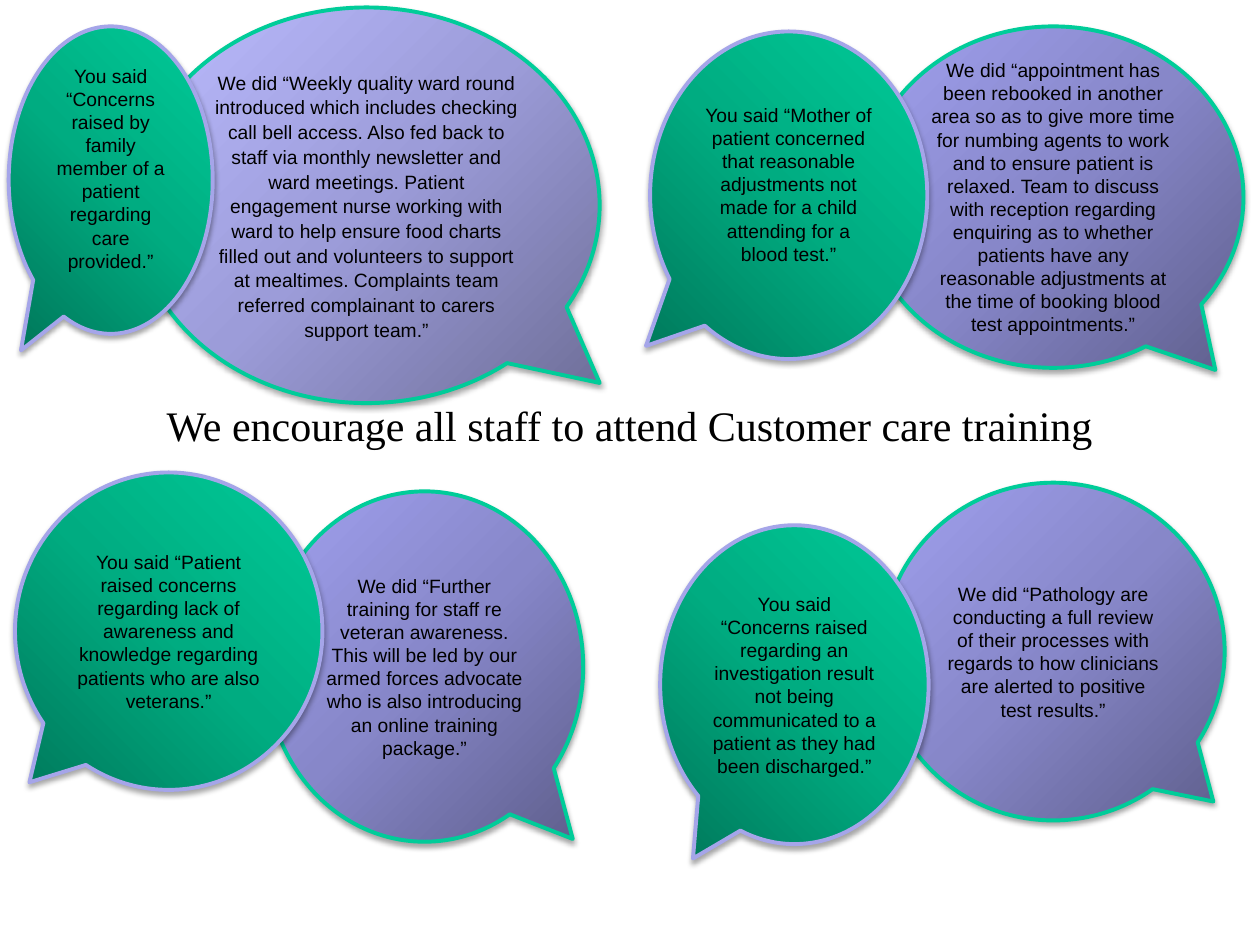
from dataclasses import dataclass

from lxml.etree import SubElement
from pptx import Presentation
from pptx.dml.color import RGBColor
from pptx.enum.shapes import MSO_SHAPE
from pptx.enum.text import MSO_ANCHOR, MSO_AUTO_SIZE, PP_ALIGN
from pptx.oxml import parse_xml
from pptx.oxml.ns import nsdecls, qn
from pptx.util import Pt


@dataclass(frozen=True)
class Theme:
    ink: str = "000000"
    said: tuple = ("00795B", "00AC81", "00CC99")
    did: tuple = ("5F5F8D", "8787C9", "A0A0EE")
    pale: tuple = ("6E6E98", "9C9CD9", "BBBBFF")
    said_edge: str = "A5A5E9"
    did_edge: str = "00CC99"
    edge: float = 2.25
    sans: str = "Arial"
    serif: str = "Times New Roman"
    small: int = 11
    large: int = 24


class Board:
    def __init__(self, slide, theme):
        self.slide = slide
        self.theme = theme

    def label(self, frame, text, font, size):
        frame.word_wrap = True
        para = frame.paragraphs[0]
        para.alignment = PP_ALIGN.CENTER
        run = para.add_run()
        run.text = text
        run.font.name = font
        run.font.size = Pt(size)
        run.font.color.rgb = RGBColor.from_string(self.theme.ink)
        return para

    def title(self, text, box):
        frame = self.slide.shapes.add_textbox(*map(Pt, box)).text_frame
        self.label(frame, text, self.theme.serif, self.theme.large)
        frame.auto_size = MSO_AUTO_SIZE.SHAPE_TO_FIT_TEXT

    def glow(self, shape, tones, left):
        """Fill with a round gradient, darkest at a lower corner."""
        stops = "".join(
            f'<a:gs pos="{pos}"><a:srgbClr val="{tone}"/></a:gs>'
            for pos, tone in zip((0, 50000, 100000), tones))
        l, r = (0, 100000) if left else (100000, 0)
        shape.fill.background()
        props = shape._element.spPr
        props.replace(props.find(qn("a:noFill")), parse_xml(
            f'<a:gradFill {nsdecls("a")} rotWithShape="1"><a:gsLst>{stops}</a:gsLst>'
            f'<a:path path="circle"><a:fillToRect l="{l}" t="100000" r="{r}" b="0"/>'
            '</a:path></a:gradFill>'))

    def shade(self, shape):
        shape.shadow.inherit = False
        effects = shape._element.spPr.find(qn("a:effectLst"))
        drop = SubElement(effects, qn("a:outerShdw"), blurRad=str(Pt(3.1)),
                          dist=str(Pt(1.8)), dir="5400000", rotWithShape="0")
        tint = SubElement(drop, qn("a:srgbClr"), val=self.theme.ink)
        SubElement(tint, qn("a:alpha"), val="35000")

    def bubble(self, text, box, tail, tones, low=3.6):
        """Draw a callout; low is the inset below its text."""
        theme = self.theme
        said = tones == theme.said
        shape = self.slide.shapes.add_shape(
            MSO_SHAPE.OVAL_CALLOUT, *map(Pt, box))
        shape.adjustments[0], shape.adjustments[1] = tail
        self.glow(shape, tones, left=said)
        shape.line.color.rgb = RGBColor.from_string(
            theme.said_edge if said else theme.did_edge)
        shape.line.width = Pt(theme.edge)
        self.shade(shape)
        frame = shape.text_frame
        frame.vertical_anchor = MSO_ANCHOR.MIDDLE
        frame.margin_bottom = Pt(low)
        return self.label(frame, text, theme.sans, theme.small)


def main():
    deck = Presentation()
    deck.slide_width, deck.slide_height = Pt(720), Pt(540)
    theme = Theme()
    board = Board(deck.slides.add_slide(deck.slide_layouts[6]), theme)

    board.bubble(
        "We did “Pathology are conducting a full review of their processes with "
        "regards to how clinicians are alerted to positive test results.”",
        (504, 275.8, 195.8, 193), (0.467, 0.444), theme.did)
    board.title("We encourage all staff to attend Customer care training",
                (54, 224.6, 612, 36))
    board.bubble(
        "We did “Further training for staff re veteran awareness. This will be led "
        "by our armed forces advocate who is also introducing an online training "
        "package.”",
        (151.9, 280.8, 181.4, 200.2), (0.467, 0.492), theme.did)
    board.bubble(
        "You said “Patient raised concerns regarding lack of awareness and "
        "knowledge regarding patients who are also veterans.”",
        (8.6, 270, 175.7, 181.4), (-0.453, 0.476), theme.said)
    para = board.bubble(
        "We did “Weekly quality ward round introduced which includes checking call "
        "bell access. Also fed back to staff via monthly newsletter and ward "
        "meetings. Patient engagement nurse working with ward to help ensure food "
        "charts filled out and volunteers to support at mealtimes. Complaints team "
        "referred complainant to carers support team.”",
        (76.3, 4.3, 266.4, 226.1), (0.5, 0.449), theme.pale)
    para.line_spacing = 1.07
    para.space_after = Pt(8)
    board.bubble(
        "We did “appointment has been rebooked in another area so as to give more "
        "time for numbing agents to work and to ensure patient is relaxed. Team to "
        "discuss with reception regarding enquiring as to whether patients have "
        "any reasonable adjustments at the time of booking blood test "
        "appointments.”",
        (493.2, 15.1, 217.4, 195.1), (0.426, 0.506), theme.did)
    board.bubble(
        "You said “Concerns raised regarding an investigation result not being "
        "communicated to a patient as they had been discharged.”",
        (377.3, 300.2, 153.4, 182.2), (-0.378, 0.545), theme.said)
    board.bubble(
        "You said “Mother of patient concerned that reasonable adjustments not "
        "made for a child attending for a blood test.”",
        (371.5, 18, 158.4, 187.2), (-0.515, 0.46), theme.said, low=16.2)
    board.bubble(
        "You said “Concerns raised by family member of a patient regarding care "
        "provided.”",
        (5, 15.1, 116.6, 175.7), (-0.44, 0.554), theme.said, low=17.4)
    deck.save("out.pptx")


if __name__ == "__main__":
    main()
